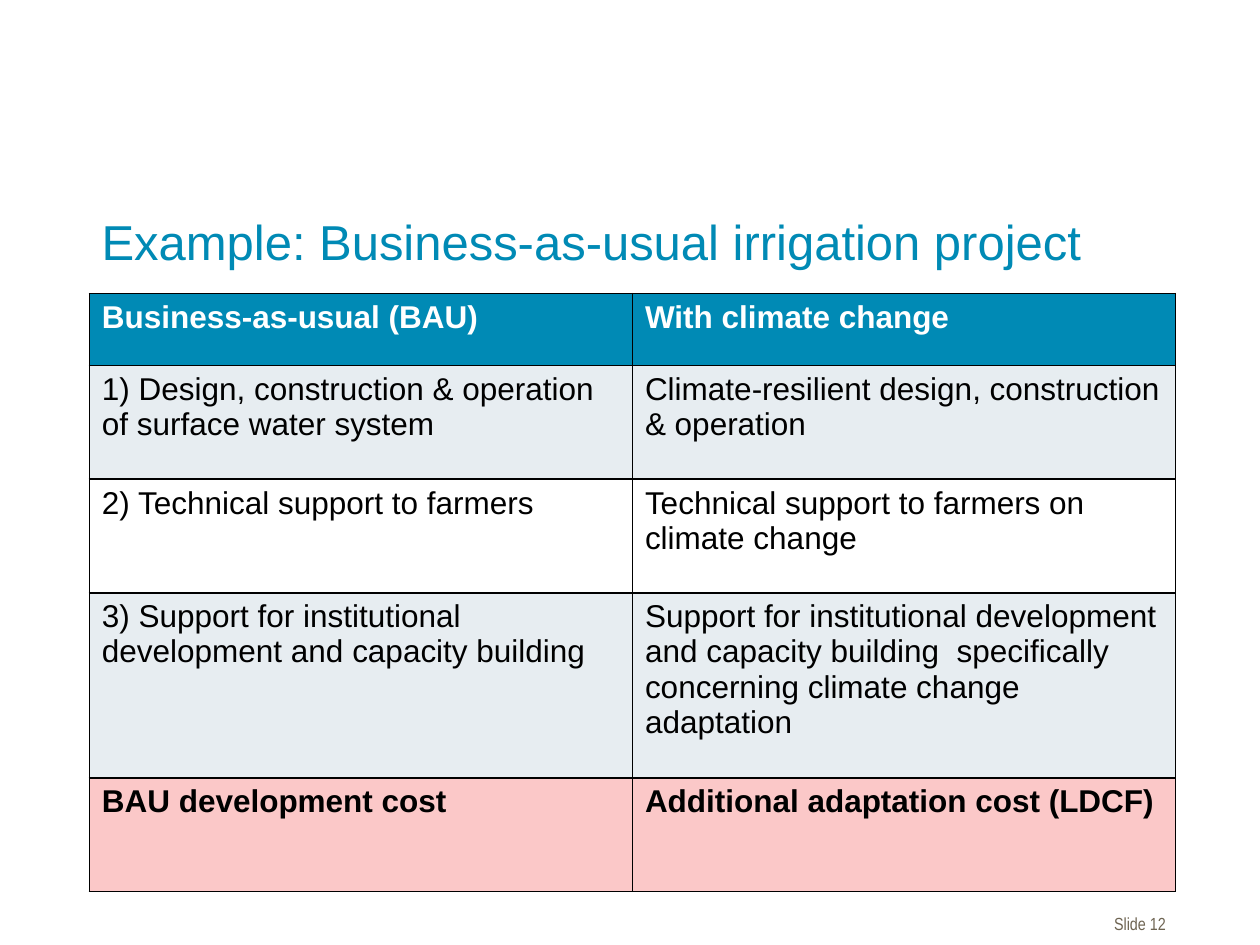
from lxml.etree import SubElement
from pptx import Presentation
from pptx.dml.color import RGBColor as Color
from pptx.enum.text import MSO_ANCHOR as Anchor, PP_ALIGN as Align
from pptx.oxml.ns import qn
from pptx.util import Cm, Pt

TITLE = "Example: Business-as-usual irrigation project"
FOOTER = "Slide 12"
ROWS = [
    ("header", 1.45, ("Business-as-usual (BAU)", "With climate change")),
    ("shaded", 2.29, ("1) Design, construction & operation of surface water system",
                      "Climate-resilient design, construction & operation")),
    ("plain", 2.29, ("2) Technical support to farmers",
                     "Technical support to farmers on climate change")),
    ("shaded", 3.73, ("3) Support for institutional development and capacity building",
                      "Support for institutional development and capacity building  "
                      "specifically concerning climate change adaptation")),
    ("total", 2.29, ("BAU development cost", "Additional adaptation cost (LDCF)")),
]

THEME = {
    "title": {"name": "Arial", "size": 28, "color": "008AB5"},
    "footer": {"name": "Arial Narrow", "size": 10, "color": "6E6452"},
    "header": {"name": "Arial", "size": 18, "color": "FFFFFF", "bold": True, "fill": "008AB5"},
    "shaded": {"name": "Arial", "size": 18, "color": "000000", "bold": False, "fill": "E7EDF1"},
    "plain": {"name": "Arial", "size": 18, "color": "000000", "bold": False, "fill": "FFFFFF"},
    "total": {"name": "Arial", "size": 18, "color": "000000", "bold": True, "fill": "FBC8C8"},
    "border": {"color": "000000", "width": 1},
}
LEFT, TABLE_TOP, COLUMN_WIDTH = 1.8, 5.92, 10.95


def write_text(frame, text, style):
    paragraph = frame.paragraphs[0]
    run = paragraph.add_run()
    run.text = text
    values = {"name": style["name"], "size": Pt(style["size"]), "bold": style.get("bold", False)}
    for attribute, value in values.items():
        setattr(run.font, attribute, value)
    run.font.color.rgb = Color.from_string(style["color"])
    return paragraph


def add_text(slide, text, style, box, alignment, frame_format):
    shape = slide.shapes.add_textbox(*map(Cm, box))
    for attribute, value in frame_format.items():
        setattr(shape.text_frame, attribute, value)
    write_text(shape.text_frame, text, style).alignment = alignment


def add_borders(cell, border):
    properties = cell._tc.get_or_add_tcPr()
    for position, side in enumerate(("lnL", "lnR", "lnT", "lnB")):
        line = SubElement(properties, qn(f"a:{side}"), w=str(Pt(border["width"])))
        fill = SubElement(line, qn("a:solidFill"))
        SubElement(fill, qn("a:srgbClr"), val=border["color"])
        properties.insert(position, line)


def add_cost_table(slide):
    heights = [height for _, height, _ in ROWS]
    column_count = len(ROWS[0][2])
    table = slide.shapes.add_table(
        len(ROWS), column_count, Cm(LEFT), Cm(TABLE_TOP),
        Cm(COLUMN_WIDTH * column_count), Cm(sum(heights))).table
    for column in table.columns:
        column.width = Cm(COLUMN_WIDTH)
    for row, (kind, height, texts) in zip(table.rows, ROWS):
        row.height = Cm(height)
        for cell, text in zip(row.cells, texts):
            write_text(cell.text_frame, text, THEME[kind])
            cell.fill.solid()
            cell.fill.fore_color.rgb = Color.from_string(THEME[kind]["fill"])
            add_borders(cell, THEME["border"])


def main():
    presentation = Presentation()
    presentation.slide_width, presentation.slide_height = Cm(25.4), Cm(19.05)
    slide = presentation.slides.add_slide(presentation.slide_layouts[6])
    add_text(slide, FOOTER, THEME["footer"], (20.93, 18.29, 2.57, 0.69), Align.RIGHT,
             {"word_wrap": True, "margin_right": 0})
    add_text(slide, TITLE, THEME["title"], (LEFT, 4.11, 22.5, 1.5), Align.LEFT,
             {"word_wrap": True, "vertical_anchor": Anchor.MIDDLE})
    add_cost_table(slide)
    presentation.save("out.pptx")


if __name__ == "__main__":
    main()
